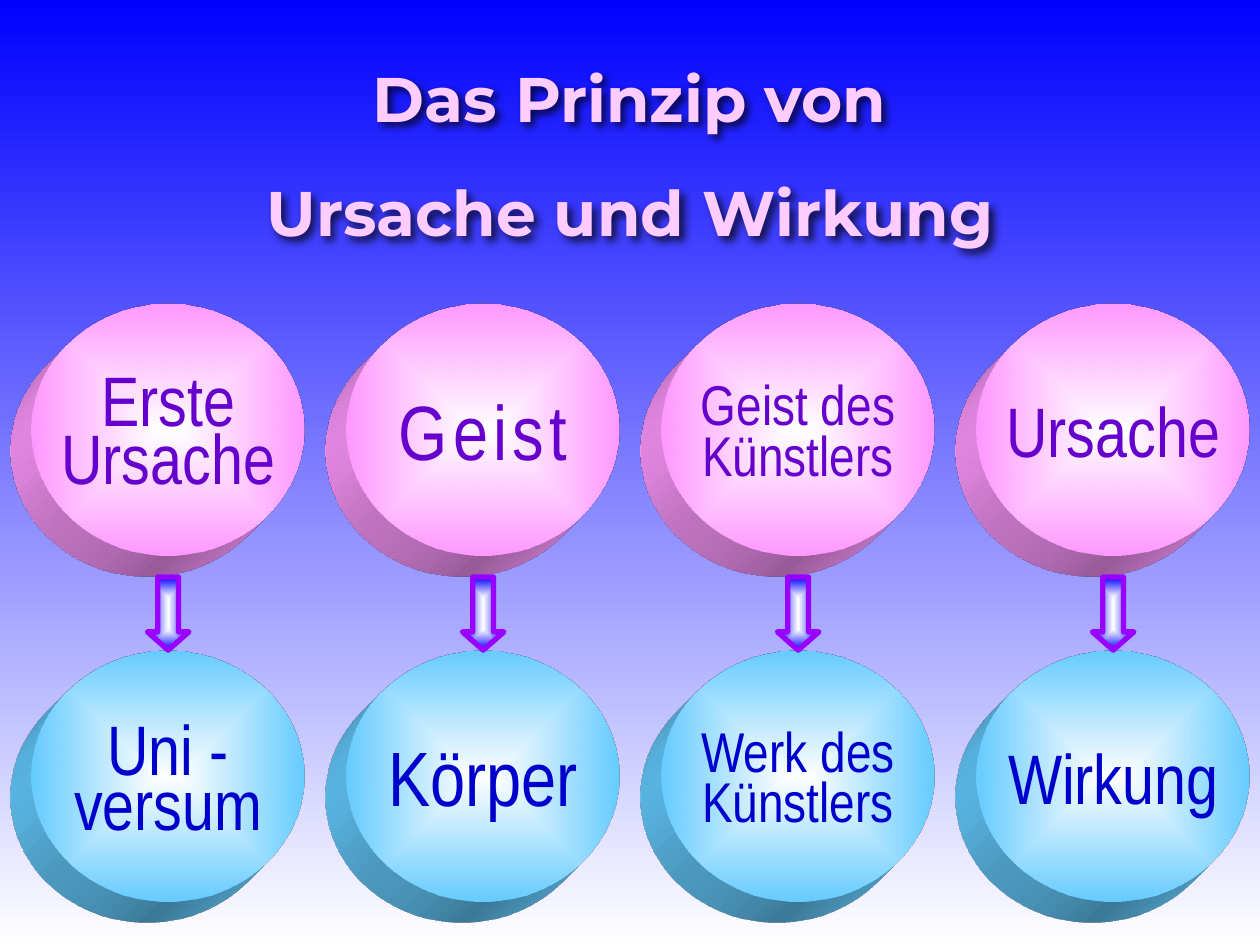
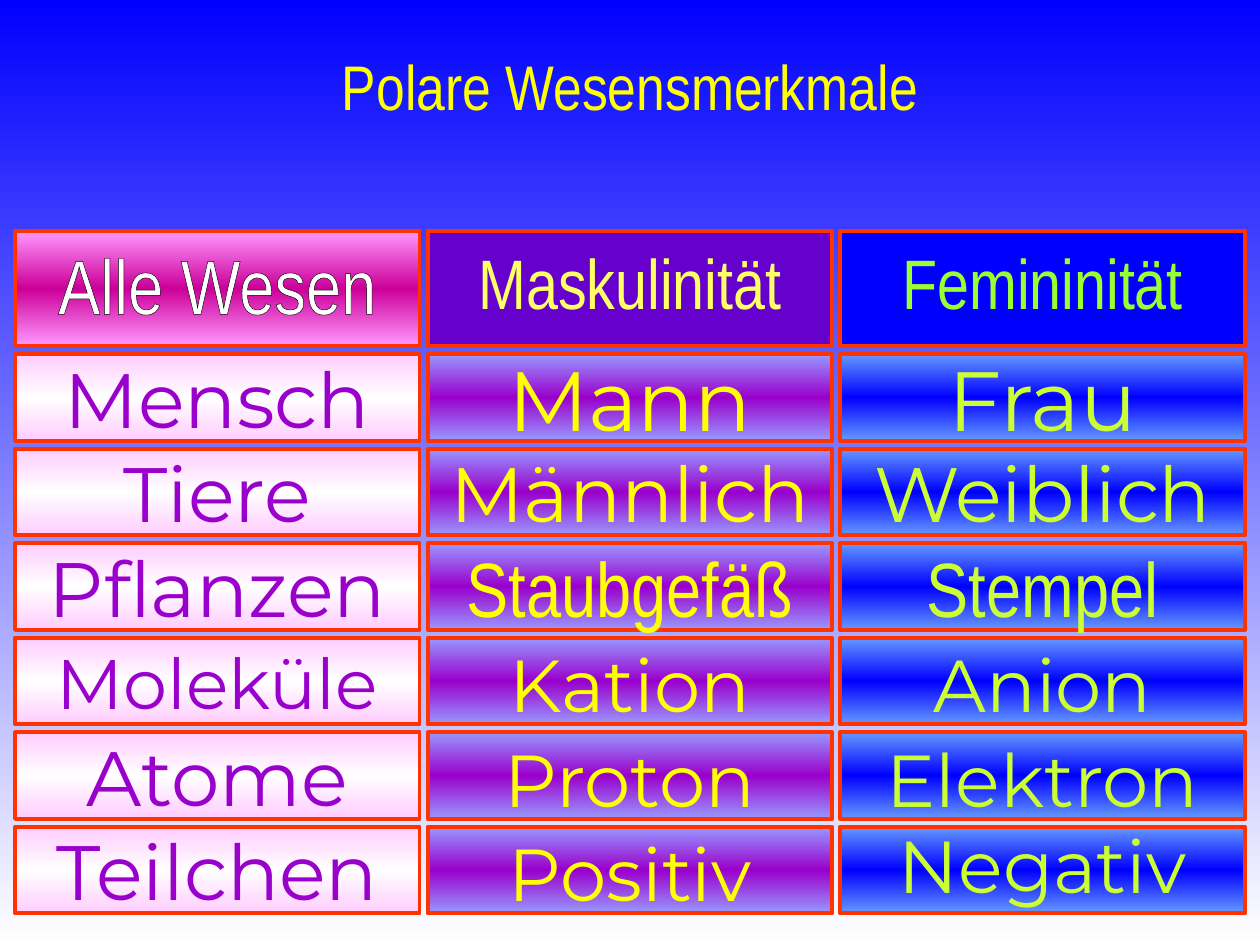
from lxml import etree
from pptx import Presentation
from pptx.dml.color import RGBColor
from pptx.enum.shapes import MSO_SHAPE
from pptx.enum.text import MSO_ANCHOR, PP_ALIGN
from pptx.oxml import parse_xml
from pptx.oxml.ns import nsdecls, qn
from pptx.util import Inches, Pt

NARROW, WIDE = "Arial Narrow", "Montserrat"

WHITE = RGBColor(0xFF, 0xFF, 0xFF)
BLACK = RGBColor(0x00, 0x00, 0x00)
BLUE = RGBColor(0x00, 0x00, 0xFF)
NAVY = RGBColor(0x00, 0x00, 0x99)
INK_BLUE = RGBColor(0x00, 0x00, 0xCC)
SKY = RGBColor(0x66, 0xCC, 0xFF)
CORNFLOWER = RGBColor(0x66, 0x99, 0xFF)
LAVENDER = RGBColor(0x99, 0x99, 0xFF)
INDIGO = RGBColor(0x66, 0x00, 0xCC)
PURPLE = RGBColor(0x99, 0x00, 0xCC)
VIOLET = RGBColor(0x99, 0x00, 0xFF)
PINK = RGBColor(0xFF, 0x99, 0xFF)
PALE_PINK = RGBColor(0xFF, 0xCC, 0xFF)
MAGENTA = RGBColor(0xCC, 0x00, 0x99)
RED = RGBColor(0xFF, 0x33, 0x00)
ORANGE = RGBColor(0xFF, 0x99, 0x33)
YELLOW = RGBColor(0xFF, 0xFF, 0x00)
PALE_YELLOW = RGBColor(0xFF, 0xFF, 0x66)
LIME = RGBColor(0xCC, 0xFF, 0x33)
GREEN = RGBColor(0x99, 0xFF, 0x33)

# Slide 1: heading lines as (text, left, top, width)
HEADING = [
    ("Das Prinzip von", 1.89, 0.42, 6.21),
    ("Ursache und Wirkung", 0.41, 1.33, 9.18),
]
# One pair per column: (cause, effect), each as (lines, size, line spacing, extra top inset)
PAIRS = [
    ((["Erste", "Ursache"], 40, 0.7, 0.13), (["Uni -", "versum"], 40, 0.65, 0.17)),
    ((["Geist"], 44, None, 0), (["Körper"], 44, None, 0)),
    ((["Geist des", "Künstlers"], 32, 0.75, 0.1), (["Werk des", "Künstlers"], 32, 0.75, 0.1)),
    ((["Ursache"], 40, None, 0), (["Wirkung"], 40, None, 0)),
]
LETTER_SPACING = {"Geist": 3}
# Rows of discs as (top, rim colour, text colour)
DISC_ROWS = [(2.41, PINK, INDIGO), (5.16, SKY, INK_BLUE)]
DISC_LEFT, DISC_STEP, DISC_WIDTH, DISC_HEIGHT = 0.25, 2.5, 2.17, 2
ARROW_TOP, ARROW_WIDTH, ARROW_HEIGHT = 4.58, 0.33, 0.58

# Slide 2: column heads as (text, size, line spacing, text colour, fill colours)
HEADS = [
    ("Alle Wesen", 44, Pt(47), WHITE, [PINK, MAGENTA, PINK]),
    ("Maskulinität", 40, Pt(40), PALE_YELLOW, [INDIGO]),
    ("Femininität", 40, Pt(40), GREEN, [BLUE]),
]
# Body columns as (text colour, fill colours)
COLUMNS = [
    (PURPLE, [PALE_PINK, WHITE, PALE_PINK]),
    (YELLOW, [LAVENDER, PURPLE, LAVENDER]),
    (LIME, [CORNFLOWER, BLUE, CORNFLOWER]),
]
# Body cells as (text, size, line spacing, font)
ROWS = [
    [("Mensch", 44, None, WIDE), ("Mann", 48, None, WIDE), ("Frau", 48, None, WIDE)],
    [("Tiere", 44, None, WIDE), ("Männlich", 44, None, WIDE), ("Weiblich", 44, None, WIDE)],
    [("Pflanzen", 44, None, WIDE), ("Staubgefäß", 44, None, NARROW), ("Stempel", 44, None, NARROW)],
    [("Moleküle", 40, None, WIDE), ("Kation", 42, 1.05, WIDE), ("Anion", 42, 1.05, WIDE)],
    [("Atome", 44, None, WIDE), ("Proton", 42, 1.05, WIDE), ("Elektron", 42, 1.05, WIDE)],
    [("Teilchen", 44, None, WIDE), ("Positiv", 42, 1.05, WIDE), ("Negativ", 42, 0.9, WIDE)],
]
GRID_LEFT, COLUMN_STEP, CELL_WIDTH = 0.12, 3.275, 3.21
HEAD_TOP, HEAD_HEIGHT = 1.83, 0.92
BODY_TOP, ROW_STEP, ROW_HEIGHT = 2.81, 0.75, 0.69


def set_gradient(fill, owner, colors, path=None):
    """Spread colors evenly, top to bottom or outwards from the centre along path."""
    fill.gradient()
    gradient = next(owner.iter(qn("a:gradFill")))
    for child in list(gradient):
        gradient.remove(child)
    stops = etree.SubElement(gradient, qn("a:gsLst"))
    for index, color in enumerate(colors):
        position = 100000 * index // (len(colors) - 1)
        stop = etree.SubElement(stops, qn("a:gs"), pos=str(position))
        etree.SubElement(stop, qn("a:srgbClr"), val=str(color))
    if path:
        centre = etree.SubElement(gradient, qn("a:path"), path=path)
        etree.SubElement(centre, qn("a:fillToRect"), l="50000", t="50000", r="50000", b="50000")
    else:
        etree.SubElement(gradient, qn("a:lin"), ang="5400000", scaled="1")


def fill_shape(shape, colors, path=None):
    if len(colors) == 1:
        shape.fill.solid()
        shape.fill.fore_color.rgb = colors[0]
    else:
        set_gradient(shape.fill, shape._element.spPr, colors, path)


def write(shape, lines, size, font_name, colors, spacing=None, outline=None, path=None, bold=False):
    """Fill the shape with centred lines; outline is (colour, width in points)."""
    frame = shape.text_frame
    frame.word_wrap = False
    frame.text = "\n".join(lines)
    for para in frame.paragraphs:
        para.alignment = PP_ALIGN.CENTER
        if spacing:
            para.line_spacing = spacing
        font = para.font
        font.name, font.size, font.bold = font_name, Pt(size), bold
        if len(colors) == 1:
            font.color.rgb = colors[0]
        else:
            set_gradient(font.fill, para._p, colors, path)
        properties = para._p.pPr.find(qn("a:defRPr"))
        if para.text in LETTER_SPACING:
            properties.set("spc", str(100 * LETTER_SPACING[para.text]))
        if outline:
            color, width = outline
            properties.insert(0, parse_xml(
                f'<a:ln {nsdecls("a")} w="{Pt(width)}"><a:solidFill>'
                f'<a:srgbClr val="{color}"/></a:solidFill></a:ln>'))


def add_page(deck):
    page = deck.slides.add_slide(deck.slide_layouts[6])
    set_gradient(page.background.fill, page._element, [BLUE, WHITE])
    return page


def add_block(page, kind, left, top, width, height, colors, path=None, line=None):
    shape = page.shapes.add_shape(kind, Inches(left), Inches(top), Inches(width), Inches(height))
    shape.shadow.inherit = False
    fill_shape(shape, colors, path)
    if line:
        shape.line.color.rgb, shape.line.width = line[0], Pt(line[1])
    else:
        shape.line.fill.background()
    shape.text_frame.vertical_anchor = MSO_ANCHOR.MIDDLE
    return shape


def add_title(page, text, left, top, width, height, **style):
    box = page.shapes.add_textbox(Inches(left), Inches(top), Inches(width), Inches(height))
    write(box, [text], 36, **style)
    return box


def add_soft_shadow(box):
    box._element.spPr.append(parse_xml(
        f'<a:effectLst {nsdecls("a")}><a:outerShdw blurRad="63500" dist="38100" dir="2700000">'
        f'<a:srgbClr val="{BLACK}"><a:alpha val="70000"/></a:srgbClr></a:outerShdw></a:effectLst>'))


def extrude(shape, color):
    """Give the shape depth towards the lower left."""
    properties = shape._element.spPr
    properties.append(parse_xml(
        f'<a:scene3d {nsdecls("a")}><a:camera prst="legacyObliqueBottomLeft"/>'
        '<a:lightRig rig="legacyFlat3" dir="t"/></a:scene3d>'))
    properties.append(parse_xml(
        f'<a:sp3d {nsdecls("a")} extrusionH="430200" prstMaterial="legacyMatte">'
        f'<a:extrusionClr><a:srgbClr val="{color}"/></a:extrusionClr></a:sp3d>'))


def build_cause_and_effect(deck):
    page = add_page(deck)
    for text, left, top, width in HEADING:
        box = add_title(page, text, left, top, width, 0.83, font_name=WIDE, bold=True,
                        colors=[PALE_PINK, WHITE], outline=(NAVY, 3))
        add_soft_shadow(box)
    for column, pair in enumerate(PAIRS):
        left = DISC_LEFT + column * DISC_STEP
        for (top, rim, ink), (lines, size, spacing, inset) in zip(DISC_ROWS, pair):
            disc = add_block(page, MSO_SHAPE.OVAL, left, top, DISC_WIDTH, DISC_HEIGHT,
                             [WHITE, rim], "shape")
            extrude(disc, rim)
            disc.text_frame.margin_top = Inches(0.05 + inset)
            write(disc, lines, size, NARROW, [ink], spacing)
        arrow = add_block(page, MSO_SHAPE.DOWN_ARROW, left + (DISC_WIDTH - ARROW_WIDTH) / 2,
                          ARROW_TOP, ARROW_WIDTH, ARROW_HEIGHT, [WHITE, BLUE], "rect", (VIOLET, 3))
        arrow.adjustments[1] = 0.44


def build_polar_traits(deck):
    page = add_page(deck)
    add_title(page, "Polare Wesensmerkmale", 0.42, 0.33, 9.16, 1.12, font_name=NARROW,
              colors=[YELLOW, ORANGE], path="rect", outline=(NAVY, 2.25))

    def add_cell(column, top, height, text, size, spacing, font_name, ink, colors):
        cell = add_block(page, MSO_SHAPE.RECTANGLE, GRID_LEFT + column * COLUMN_STEP, top,
                         CELL_WIDTH, height, colors, line=(RED, 2.25))
        write(cell, [text], size, font_name, [ink], spacing, (BLACK, 0.75))

    for column, (text, size, spacing, ink, colors) in enumerate(HEADS):
        add_cell(column, HEAD_TOP, HEAD_HEIGHT, text, size, spacing, NARROW, ink, colors)
    for row, cells in enumerate(ROWS):
        for column, (cell, style) in enumerate(zip(cells, COLUMNS)):
            add_cell(column, BODY_TOP + row * ROW_STEP, ROW_HEIGHT, *cell, *style)


def main():
    deck = Presentation()
    deck.slide_width, deck.slide_height = Inches(10), Inches(7.5)
    build_cause_and_effect(deck)
    build_polar_traits(deck)
    deck.save("out.pptx")


if __name__ == "__main__":
    main()
